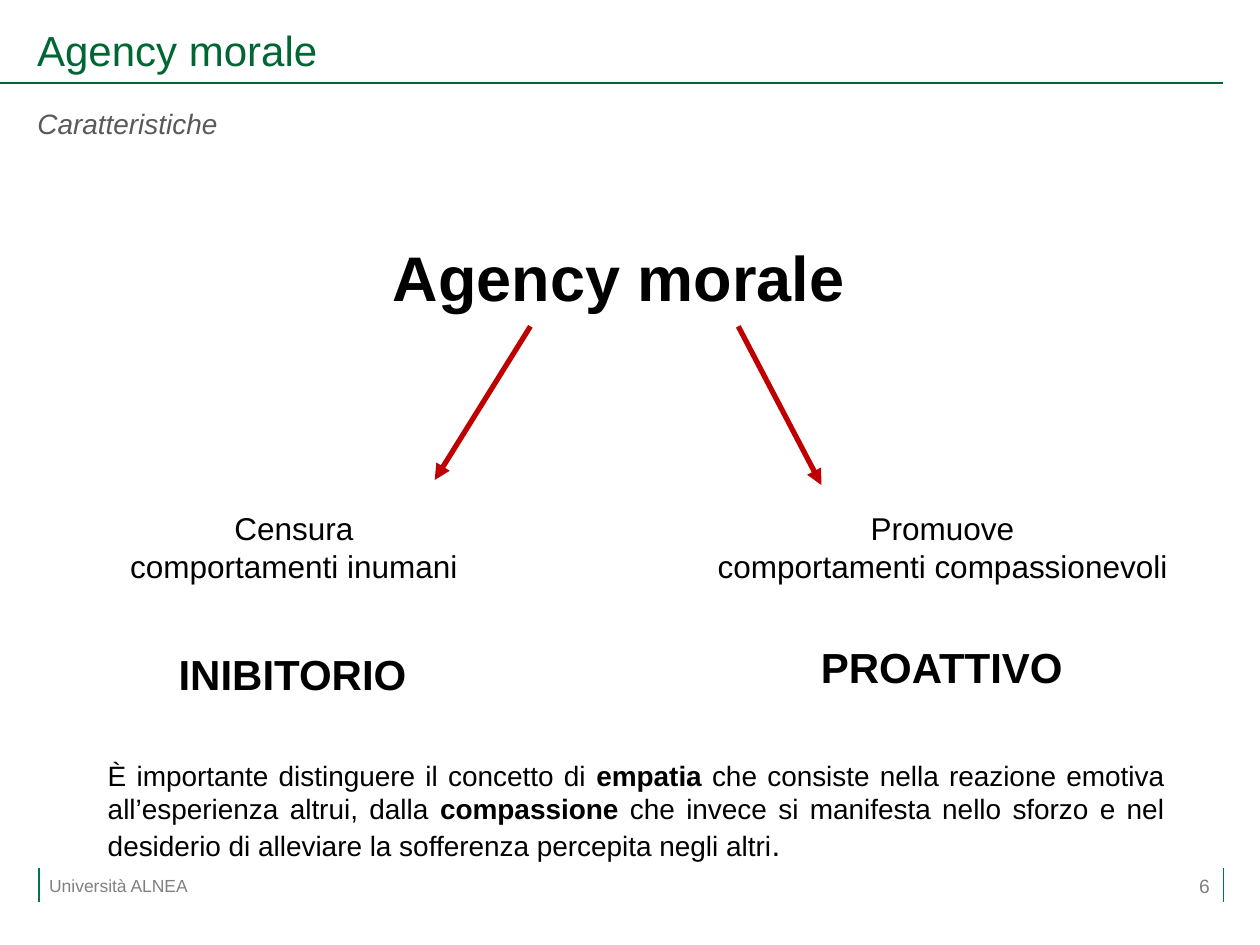
from lxml import etree
from pptx import Presentation
from pptx.dml.color import RGBColor
from pptx.enum.shapes import MSO_CONNECTOR
from pptx.enum.text import MSO_ANCHOR, PP_ALIGN
from pptx.oxml.ns import qn
from pptx.util import Pt

STRAIGHT = MSO_CONNECTOR.STRAIGHT
TOP, MIDDLE = MSO_ANCHOR.TOP, MSO_ANCHOR.MIDDLE
LEFT, CENTER, RIGHT, JUSTIFY = (
    PP_ALIGN.LEFT, PP_ALIGN.CENTER, PP_ALIGN.RIGHT, PP_ALIGN.JUSTIFY)

FONT = "Arial"
GREEN = RGBColor(0x00, 0x66, 0x33)
FOOTER_GREEN = RGBColor(0x00, 0x77, 0x49)
RED = RGBColor(0xC0, 0x00, 0x00)
BLACK = RGBColor(0x00, 0x00, 0x00)
DARK_GRAY = RGBColor(0x59, 0x59, 0x59)
GRAY = RGBColor(0x80, 0x80, 0x80)

# Content: a run is (text, size, style)
TITLE = "Agency morale"
SUBTITLE = "Caratteristiche"
FOOTER = "Università ALNEA"
PAGE_NUMBER = "6"
CONCEPT = "Agency morale"
BRANCHES = [
    {"lines": ["Censura", "comportamenti inumani"],
     "box": (66.2, 287.3, 203.5, 51),
     "arrow": (303.1, 186.5, 248.4, 274.3),
     "label": "INIBITORIO", "label_box": (95, 367.2, 147, 36)},
    {"lines": ["Promuove", "comportamenti compassionevoli"],
     "box": (358.6, 287.3, 360, 51),
     "arrow": (421.9, 186.5, 469.4, 277.2),
     "label": "PROATTIVO", "label_box": (462, 363, 155, 36)},
]
DEFINITION = [
    ("È importante distinguere il concetto di ", 16, ""),
    ("empatia", 16, "bold"),
    (" che consiste nella reazione emotiva all’esperienza altrui, dalla ", 16, ""),
    ("compassione", 16, "bold"),
    (" che invece si manifesta nello sforzo e nel desiderio di alleviare "
     "la sofferenza percepita negli altri", 16, ""),
    (".", 18, ""),
]

# Page frame
RIGHT_EDGE = 699.1
FOOTER_TOP, FOOTER_BOTTOM = 496.1, 515.5


def write(frame, paragraphs, color=BLACK, align=LEFT, anchor=TOP, side_inset=7.2):
    """Fill a text frame with paragraphs, each a list of runs."""
    frame.word_wrap = True
    frame.vertical_anchor = anchor
    frame.margin_left = frame.margin_right = Pt(side_inset)
    frame.margin_top = frame.margin_bottom = Pt(3.6)
    for index, runs in enumerate(paragraphs):
        paragraph = frame.add_paragraph() if index else frame.paragraphs[0]
        paragraph.alignment = align
        for text, size, style in runs:
            run = paragraph.add_run()
            run.text = text
            run.font.name = FONT
            run.font.size = Pt(size)
            run.font.bold = style == "bold"
            run.font.italic = style == "italic"
            run.font.color.rgb = color


def add_text(slide, box, paragraphs, **options):
    shape = slide.shapes.add_textbox(*map(Pt, box))
    write(shape.text_frame, paragraphs, **options)


def add_line(slide, ends, color, width, arrow=False):
    connector = slide.shapes.add_connector(STRAIGHT, *map(Pt, ends))
    connector.line.color.rgb = color
    connector.line.width = Pt(width)
    if arrow:
        line = connector.line._get_or_add_ln()
        etree.SubElement(line, qn("a:tailEnd"), type="triangle")
    etree.SubElement(connector._element.spPr, qn("a:effectLst"))


def main():
    presentation = Presentation()
    presentation.slide_width, presentation.slide_height = Pt(720), Pt(540)
    slide = presentation.slides.add_slide(presentation.slide_layouts[5])

    # Rules and footer
    add_line(slide, (0, 47.5, RIGHT_EDGE, 47.5), GREEN, 1.5)
    for x in (22.3, RIGHT_EDGE):
        add_line(slide, (x, FOOTER_TOP, x, FOOTER_BOTTOM), FOOTER_GREEN, 1)
    add_text(slide, (21, 496.1, 110, 19.4), [[(FOOTER, 10, "")]],
             color=GRAY, anchor=MIDDLE)
    add_text(slide, (618.5, 491.8, 80, 28.8), [[(PAGE_NUMBER, 11, "")]],
             color=GRAY, align=RIGHT, anchor=MIDDLE)

    # Title and subtitle
    title = slide.shapes.title
    title.left, title.top, title.width, title.height = map(
        Pt, (21.2, 13.7, 677.5, 33.1))
    write(title.text_frame, [[(TITLE, 24, "")]], color=GREEN, side_inset=0)
    title.text_frame.paragraphs[0].line_spacing = 0.9
    add_text(slide, (21.4, 57.6, 677.5, 27.4), [[(SUBTITLE, 16, "italic")]],
             color=DARK_GRAY, side_inset=0)

    # Concept and its two branches
    add_text(slide, (217.4, 132.5, 285, 51), [[(CONCEPT, 36, "bold")]])
    for branch in BRANCHES:
        add_line(slide, branch["arrow"], RED, 3, arrow=True)
        add_text(slide, branch["box"],
                 [[(line, 18, "")] for line in branch["lines"]], align=CENTER)
        add_text(slide, branch["label_box"], [[(branch["label"], 24, "bold")]])

    # Definition
    add_text(slide, (54.5, 429.8, 618, 67.7), [DEFINITION], align=JUSTIFY)

    presentation.save("out.pptx")


if __name__ == "__main__":
    main()
